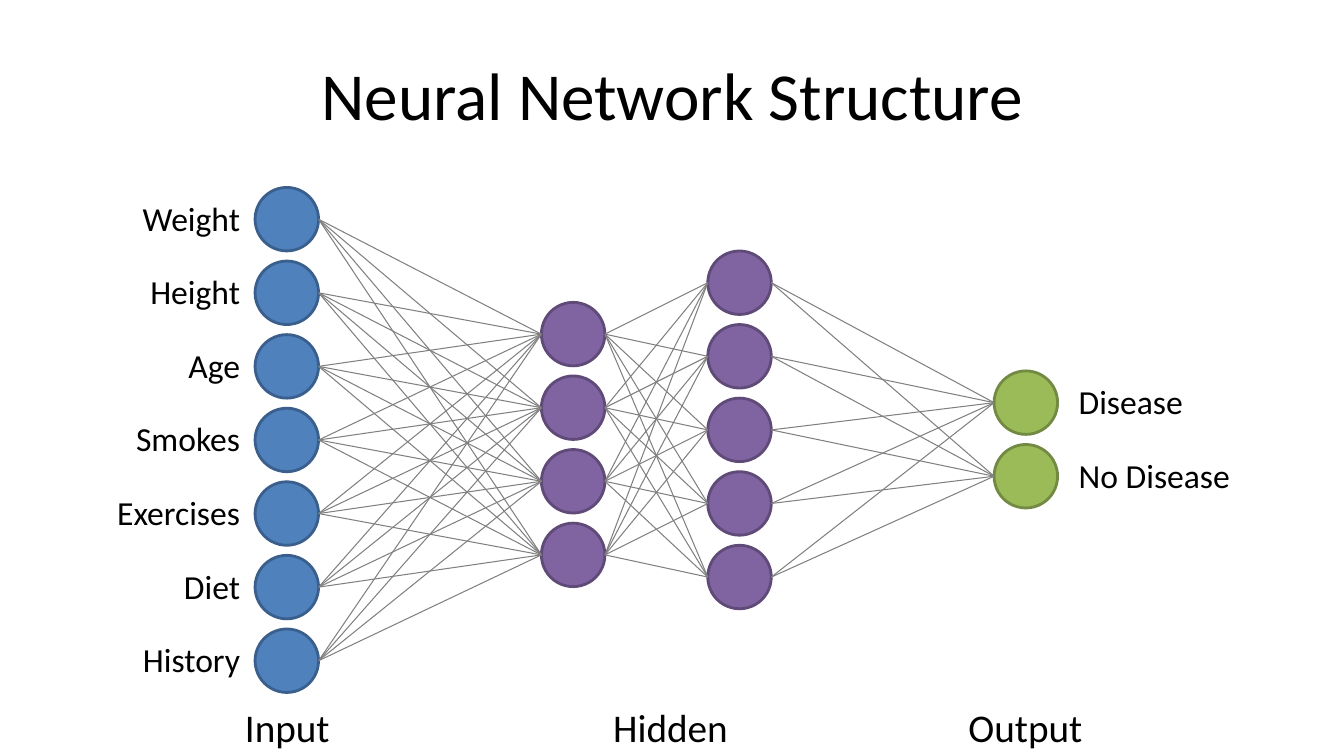
from itertools import pairwise, product

from lxml.etree import SubElement
from pptx import Presentation
from pptx.dml.color import RGBColor
from pptx.enum.shapes import MSO_CONNECTOR, MSO_SHAPE
from pptx.enum.text import MSO_ANCHOR, PP_ALIGN
from pptx.oxml.ns import qn
from pptx.util import Inches, Pt

COLORS = {
    "text": "000000",
    "link": "808080",
    "input": "4F81BD",
    "input_edge": "3A5F8C",
    "hidden": "8064A2",
    "hidden_edge": "5F4A78",
    "output": "9BBB59",
    "output_edge": "738A42",
}
FONT = "Calibri"
NODE_SIZE = 0.63
NODE_PITCH = 0.73
LABEL_HEIGHT = 0.5
LABEL_OFFSET = 0.05  # from the top of a node to the top of its label

INPUT_LABELS = ["Weight", "Height", "Age", "Smokes", "Exercises", "Diet", "History"]
OUTPUT_LABELS = ["Disease", "No Disease"]

# Layers from left to right: kind, left, top of first node, node count
LAYERS = [
    ("input", 2.53, 1.86, len(INPUT_LABELS)),
    ("hidden", 5.37, 3, 4),
    ("hidden", 7.02, 2.49, 5),
    ("output", 9.86, 3.68, len(OUTPUT_LABELS)),
]
# Captions below the layers: text, horizontal centre
CAPTIONS = [("Input", 2.85), ("Hidden", 6.65), ("Output", 10.17)]


def color(name):
    return RGBColor.from_string(COLORS[name])


def add_text(slide, text, left, top, width, height, size, align):
    box = slide.shapes.add_textbox(
        Inches(left), Inches(top), Inches(width), Inches(height)
    )
    text_frame = box.text_frame
    text_frame.word_wrap = True
    text_frame.vertical_anchor = MSO_ANCHOR.MIDDLE
    text_frame.text = text
    paragraph = text_frame.paragraphs[0]
    paragraph.alignment = align
    font = paragraph.runs[0].font
    font.name = FONT
    font.size = Pt(size)
    font.color.rgb = color("text")


def add_node(slide, kind, left, top):
    shape = slide.shapes.add_shape(
        MSO_SHAPE.OVAL, Inches(left), Inches(top), Inches(NODE_SIZE), Inches(NODE_SIZE)
    )
    shape.shadow.inherit = False
    shape.fill.solid()
    shape.fill.fore_color.rgb = color(kind)
    shape.line.color.rgb = color(f"{kind}_edge")
    shape.line.width = Pt(2)
    return shape


def add_layer(slide, kind, left, top, count):
    return [add_node(slide, kind, left, top + i * NODE_PITCH) for i in range(count)]


def add_link(slide, source, target):
    connector = slide.shapes.add_connector(
        MSO_CONNECTOR.STRAIGHT,
        source.left + source.width,
        source.top + source.height // 2,
        target.left,
        target.top + target.height // 2,
    )
    connector.line.color.rgb = color("link")
    connector.line.width = Pt(0.75)
    SubElement(connector._element.spPr, qn("a:effectLst"))


def add_node_labels(slide, labels, left, width, first_node_top, align):
    for i, label in enumerate(labels):
        top = first_node_top + LABEL_OFFSET + i * NODE_PITCH
        add_text(slide, label, left, top, width, LABEL_HEIGHT, 24, align)


def main():
    presentation = Presentation()
    presentation.slide_width = Inches(13.33)
    presentation.slide_height = Inches(7.5)
    slide = presentation.slides.add_slide(presentation.slide_layouts[6])

    # Title
    add_text(slide, "Neural Network Structure", 0.67, 0.3, 12, 1.25, 48, PP_ALIGN.CENTER)

    # Nodes, then every link between neighbouring layers
    layers = [add_layer(slide, *layer) for layer in LAYERS]
    for sources, targets in pairwise(layers):
        for source, target in product(sources, targets):
            add_link(slide, source, target)

    # Labels beside the input and output nodes
    add_node_labels(slide, INPUT_LABELS, 0.88, 1.6, LAYERS[0][2], PP_ALIGN.RIGHT)
    add_node_labels(slide, OUTPUT_LABELS, 10.6, 1.9, LAYERS[-1][2], PP_ALIGN.LEFT)

    # Layer captions
    caption_width = 1.6
    for caption, center in CAPTIONS:
        left = center - caption_width / 2
        add_text(slide, caption, left, 6.93, caption_width, 0.57, 28, PP_ALIGN.CENTER)

    presentation.save("out.pptx")


if __name__ == "__main__":
    main()
